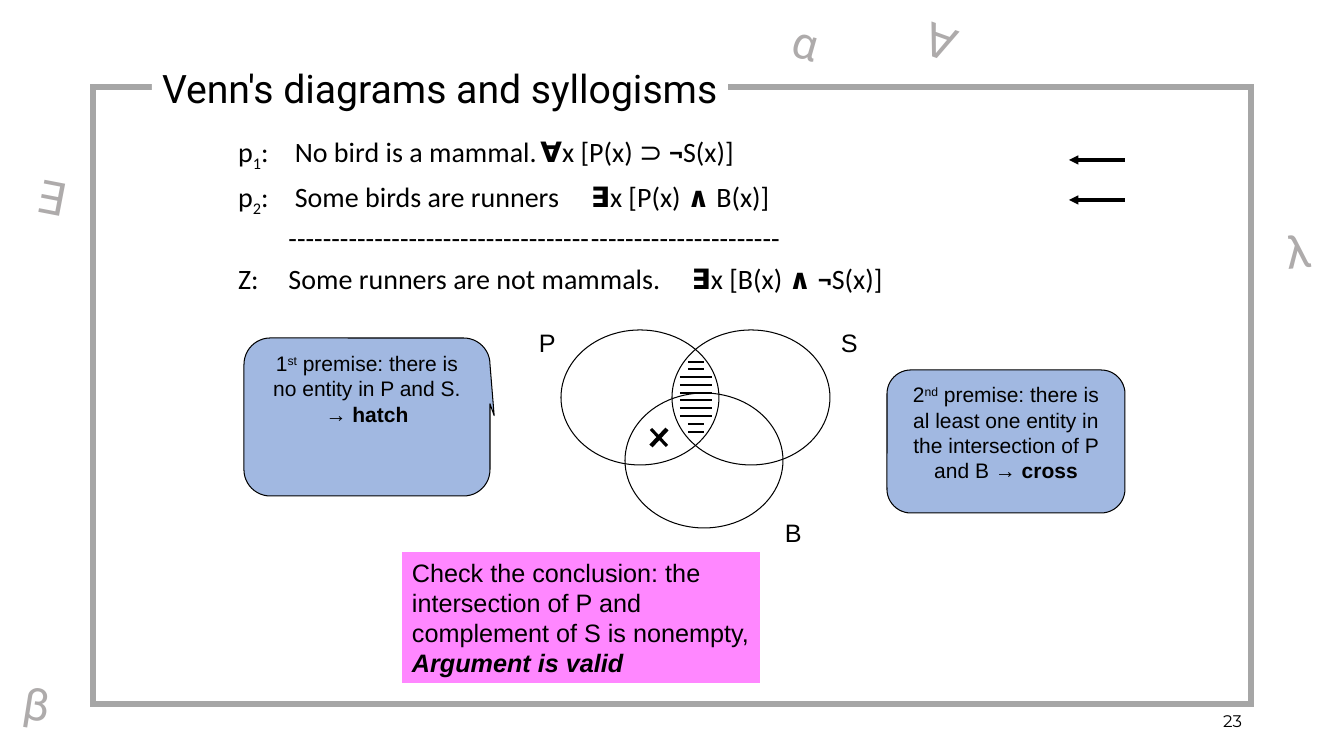
"""Build a slide that checks a syllogism with a three-circle Venn diagram."""
from lxml.etree import SubElement
from pptx import Presentation
from pptx.dml.color import RGBColor
from pptx.enum.shapes import MSO_CONNECTOR, MSO_SHAPE as SHAPE
from pptx.enum.text import MSO_ANCHOR as ANCHOR, MSO_AUTO_SIZE, PP_ALIGN as ALIGN
from pptx.oxml.ns import qn
from pptx.util import Pt

PX = 914400 / 100.8
BLACK = RGBColor(0x00, 0x00, 0x00)
WHITE = RGBColor(0xFF, 0xFF, 0xFF)
BLUE = RGBColor(0x44, 0x72, 0xC4)
MAGENTA = RGBColor(0xFF, 0x00, 0xFF)
FRAME_GREY = RGBColor(0xA6, 0xA6, 0xA6)
SYMBOL_GREY = RGBColor(0xAE, 0xAB, 0xAB)
BOLD = {"bold": True}
SUB, SUPER = {"baseline": -25000}, {"baseline": 30000}


def emu(*lengths):
    return [round(length * PX) for length in lengths]


def write(shape, paragraphs, font, size, color=BLACK, align=ALIGN.LEFT, anchor=ANCHOR.TOP):
    frame = shape.text_frame
    frame.word_wrap = True
    frame.auto_size = MSO_AUTO_SIZE.NONE
    frame.vertical_anchor = anchor
    for number, runs in enumerate(paragraphs):
        paragraph = frame.add_paragraph() if number else frame.paragraphs[0]
        paragraph.alignment = align
        for text, style in runs:
            run = paragraph.add_run()
            run.text = text
            run.font.name, run.font.size = font, Pt(size)
            run.font.color.rgb = color
            for key, value in style.items():
                if key == "baseline":
                    run._r.get_or_add_rPr().set(key, str(value))
                else:
                    setattr(run.font, key, value)


deck = Presentation()
deck.slide_width, deck.slide_height = emu(1344, 756)
slide = deck.slides.add_slide(deck.slide_layouts[1])
shapes = slide.shapes
title, argument = shapes.title, slide.placeholders[1]

argument.left, argument.top, argument.width, argument.height = emu(228, 133, 928, 174)
write(argument, [
    [("p", {}), ("1", SUB), (":\t No bird is a mammal.\t", {}), ("∀", BOLD),
     ("x [P(x) ⊃ ", {}), ("¬", BOLD), ("S(x)]", {})],
    [("p", {}), ("2", SUB), (":\t Some birds are runners\t", {}), ("∃", BOLD),
     ("x [P(x) ", {}), ("∧ ", BOLD), ("B(x)]", {})],
    [("\t" + "-" * 35 + "\t" + "-" * 22, {})],
    [("Z:\tSome runners are not mammals.\t", {}), ("∃", BOLD),
     ("x [B(x) ", {}), ("∧ ¬", BOLD), ("S(x)]", {})],
], "Calibri", 20)
STATEMENT_STOPS, RULE_STOPS = (126, 630), (25, 529)
for row, paragraph in enumerate(argument.text_frame.paragraphs):
    properties = paragraph._p.get_or_add_pPr()
    properties.set("marL", "0")
    properties.set("indent", "0")
    SubElement(properties, qn("a:buNone"))
    tabs = SubElement(properties, qn("a:tabLst"))
    for stop in emu(*(RULE_STOPS if row == 2 else STATEMENT_STOPS)):
        SubElement(tabs, qn("a:tab"), pos=str(stop), algn="l")
    paragraph.line_spacing = 0.8
    paragraph.space_before = Pt(10 if row else 0)

page_number = shapes.add_textbox(*emu(950, 701, 302, 40))
write(page_number, [[("23", {})]], "Montserrat", 12, align=ALIGN.RIGHT, anchor=ANCHOR.MIDDLE)

for term, left, top, label_left, label_top in [
    ("P", 561, 330, 529, 322), ("S", 672, 330, 831, 322), ("B", 625, 393, 775, 512),
]:
    circle = shapes.add_shape(SHAPE.OVAL, *emu(left, top, 158, 135))
    circle.shadow.inherit = False
    circle.fill.background()
    circle.line.color.rgb, circle.line.width = BLACK, Pt(0.75)
    write(shapes.add_textbox(*emu(label_left, label_top, 47, 40)), [[(term, {})]], "Arial", 18)

premise_arrows = [(1069, y, 1125, y, 2.25, True) for y in (160, 200)]
hatch = []
for step in range(10):
    half, y = 8 if step in (0, 1, 8, 9) else 16, 362 + 70 * step // 9
    hatch.append((696 - half, y, 696 + half, y, 1.5, False))
cross = [(651, 429, 667, 446, 2.25, False), (667, 429, 651, 446, 3, False)]
for x1, y1, x2, y2, weight, arrow in premise_arrows + hatch + cross:
    stroke = shapes.add_connector(MSO_CONNECTOR.STRAIGHT, *emu(x1, y1, x2, y2))
    stroke.line.color.rgb, stroke.line.width = BLACK, Pt(weight)
    if arrow:
        SubElement(stroke.line._get_or_add_ln(), qn("a:headEnd"), type="triangle")
    SubElement(stroke._element.spPr, qn("a:effectLst"))

first_premise = [
    [("1", {}), ("st", SUPER), (" premise: there is no entity in P and S.", {})],
    [("→ hatch", BOLD)],
]
second_premise = [
    [("2", {}), ("nd", SUPER),
     (" premise: there is al least one entity in the intersection of P and B → ", {}),
     ("cross", BOLD)],
]
conclusion = [
    [("Check the conclusion: the intersection of P and complement of S is nonempty, ", {}),
     ("Argument is valid", {"bold": True, "italic": True})],
]
CALLOUT = SHAPE.ROUNDED_RECTANGULAR_CALLOUT
for kind, box, pointer, color, opacity, words, size, align in [
    (CALLOUT, (244, 338, 246, 158), (0.517, -0.009), BLUE, 50, first_premise, 15, ALIGN.CENTER),
    (CALLOUT, (887, 370, 238, 143), (-0.501, 0.082), BLUE, 50, second_premise, 15, ALIGN.CENTER),
    (SHAPE.RECTANGLE, (402, 552, 358, 131), (), MAGENTA, 47, conclusion, 18, ALIGN.LEFT),
]:
    note = shapes.add_shape(kind, *emu(*box))
    note.shadow.inherit = False
    note.fill.solid()
    note.fill.fore_color.rgb = color
    tint = note._element.spPr.find(qn("a:solidFill")).find(qn("a:srgbClr"))
    SubElement(tint, qn("a:alpha"), val=str(opacity * 1000))
    if pointer:
        note.adjustments[0], note.adjustments[1] = pointer
        note.line.color.rgb, note.line.width = BLACK, Pt(0.75)
    else:
        note.line.fill.background()
    write(note, words, "Arial", size, align=align)

border = shapes.add_shape(SHAPE.RECTANGLE, *emu(93, 87, 1158, 617))
border.shadow.inherit = False
border.fill.background()
border.line.color.rgb, border.line.width = FRAME_GREY, Pt(4.5)
SubElement(border.line._get_or_add_ln(), qn("a:miter"), lim="800000")

title.left, title.top, title.width, title.height = emu(152, 57, 576, 61)
title.fill.solid()
title.fill.fore_color.rgb = WHITE
write(title, [[("Venn's diagrams and syllogisms", {})]], "Roboto", 28, anchor=ANCHOR.MIDDLE)
shapes._spTree.append(title._element)

for symbol, left, top, width, angle in [
    ("∀", 915, 11, 60, 20), ("∃", 27, 166, 64, 11), ("α", 783, 12, 64, 16),
    ("β", 14, 672, 58, 9), (" λ", 1265, 218, 82, 354),
]:
    ornament = shapes.add_textbox(*emu(left, top, width, 65))
    ornament.rotation = angle
    write(ornament, [[(symbol, {})]], "Roboto", 32, SYMBOL_GREY)

deck.save("out.pptx")
